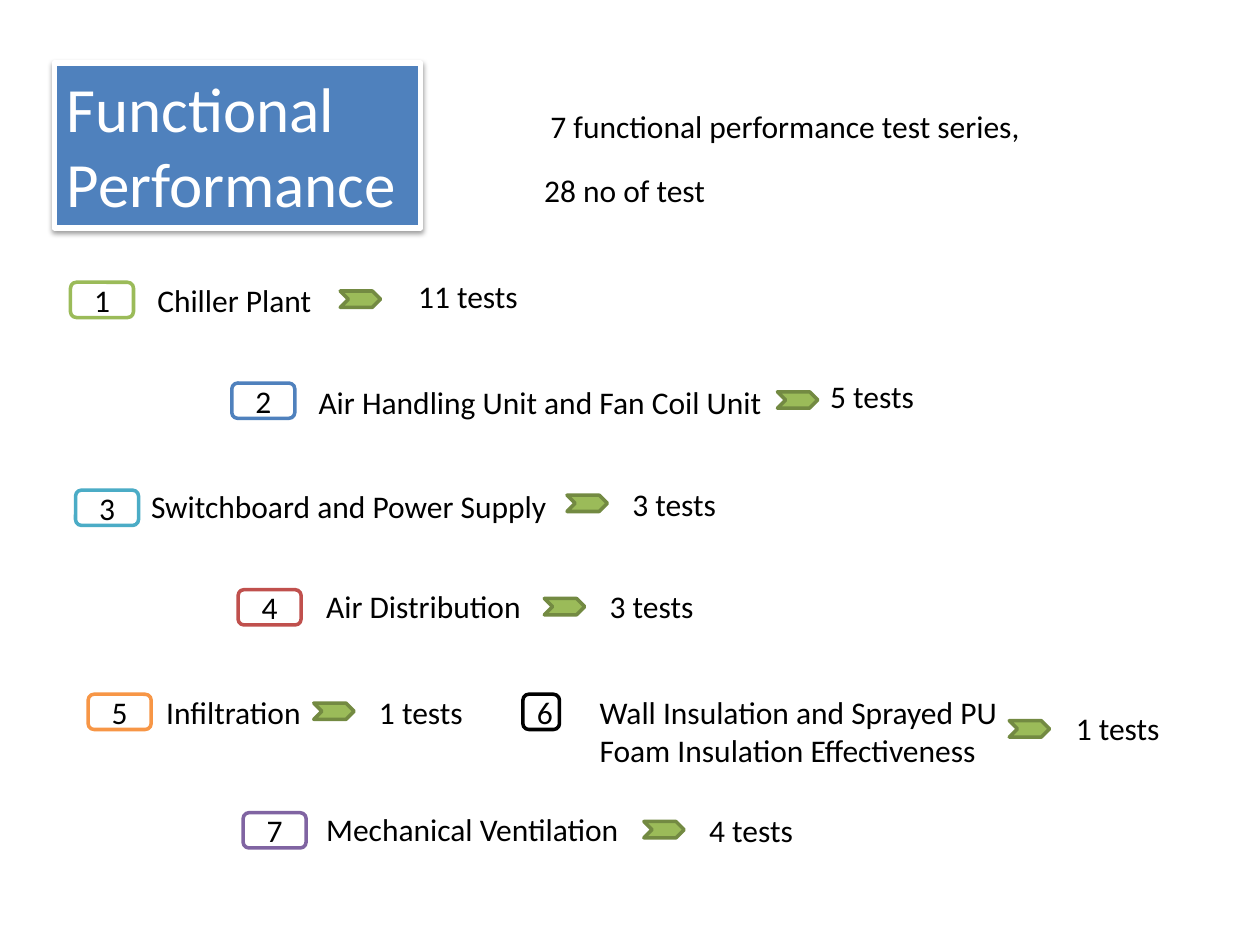
from lxml.etree import SubElement
from pptx import Presentation
from pptx.dml.color import RGBColor
from pptx.enum.shapes import MSO_SHAPE
from pptx.enum.text import MSO_ANCHOR, MSO_AUTO_SIZE, PP_ALIGN
from pptx.oxml.ns import qn
from pptx.util import Inches, Pt

BADGE_HEIGHT = 0.28
ARROW_SIZE = (0.32, 0.13)
LABEL_HEIGHT = 0.4
COUNT_WIDTH = 0.87

# number, badge (left, top, width, line colour), label (text, left, top, width),
# arrow (left, top), count (text, left, top)
TEST_SERIES = [
    ("1", (0.56, 2.24, 0.5, "9BBB59"), ("Chiller Plant", 1.15, 2.18, 2.07),
     (2.7, 2.31), ("11 tests", 3.22, 2.15)),
    ("2", (1.84, 3.04, 0.5, "4F81BD"), ("Air Handling Unit and Fan Coil Unit", 2.43, 2.99, 3.76),
     (6.17, 3.11), ("5 tests", 6.49, 2.94)),
    ("3", (0.6, 3.89, 0.5, "4BACC6"), ("Switchboard and Power Supply", 1.1, 3.82, 3.38),
     (4.5, 3.93), ("3 tests", 4.92, 3.8)),
    ("4", (1.89, 4.68, 0.5, "C0504D"), ("Air Distribution", 2.49, 4.61, 1.76),
     (4.32, 4.75), ("3 tests", 4.74, 4.61)),
    ("5", (0.7, 5.51, 0.5, "F79646"), ("Infiltration", 1.22, 5.45, 1.28),
     (2.49, 5.58), ("1 tests", 2.91, 5.45)),
    ("6", (4.15, 5.51, 0.29, "000000"),
     ("Wall Insulation and Sprayed PU Foam Insulation Effectiveness", 4.66, 5.45, 3.78),
     (8.01, 5.72), ("1 tests", 8.44, 5.58)),
    ("7", (1.93, 6.45, 0.5, "8064A2"), ("Mechanical Ventilation", 2.49, 6.38, 2.61),
     (5.11, 6.52), ("4 tests", 5.53, 6.39)),
]


def color(hex_string):
    return RGBColor.from_string(hex_string)


def write_text(shape, text, size=18, font="Calibri", font_color="000000",
               align=PP_ALIGN.LEFT, anchor=MSO_ANCHOR.TOP, wrap=True):
    frame = shape.text_frame
    frame.auto_size = MSO_AUTO_SIZE.NONE
    frame.word_wrap = wrap
    frame.vertical_anchor = anchor
    paragraph = frame.paragraphs[0]
    paragraph.alignment = align
    run = paragraph.add_run()
    run.text = text
    run.font.size = Pt(size)
    run.font.name = font
    run.font.color.rgb = color(font_color)


def add_drop_shadow(shape):
    effects = SubElement(shape._element.spPr, qn("a:effectLst"))
    shadow = SubElement(effects, qn("a:outerShdw"), blurRad=str(Pt(3.1)),
                        dist=str(Pt(1.6)), dir="5400000", rotWithShape="0")
    shadow_color = SubElement(shadow, qn("a:srgbClr"), val="000000")
    SubElement(shadow_color, qn("a:alpha"), val="38000")


class SlideBuilder:
    def __init__(self, slide):
        self.slide = slide

    def paint(self, shape, fill, line, line_width=2):
        shape.fill.solid()
        shape.fill.fore_color.rgb = color(fill)
        shape.line.color.rgb = color(line)
        shape.line.width = Pt(line_width)

    def title(self, text, left, top, width, height):
        title = self.slide.shapes.title
        title.left, title.top = Inches(left), Inches(top)
        title.width, title.height = Inches(width), Inches(height)
        self.paint(title, "4F81BD", "FFFFFF", line_width=3)
        add_drop_shadow(title)
        write_text(title, text, size=36, font_color="FFFFFF")

    def label(self, text, left, top, width, height=LABEL_HEIGHT, wrap=False):
        box = self.slide.shapes.add_textbox(
            Inches(left), Inches(top), Inches(width), Inches(height))
        write_text(box, text, wrap=wrap)

    def preset(self, kind, left, top, width, height, fill, line):
        shape = self.slide.shapes.add_shape(
            kind, Inches(left), Inches(top), Inches(width), Inches(height))
        shape.shadow.inherit = False
        self.paint(shape, fill, line)
        return shape

    def badge(self, number, left, top, width, line):
        shape = self.preset(MSO_SHAPE.ROUNDED_RECTANGLE, left, top, width,
                            BADGE_HEIGHT, "FFFFFF", line)
        write_text(shape, number, align=PP_ALIGN.CENTER, anchor=MSO_ANCHOR.MIDDLE)

    def arrow(self, left, top):
        self.preset(MSO_SHAPE.CHEVRON, left, top, *ARROW_SIZE, "9BBB59", "738A42")


def main():
    presentation = Presentation()
    presentation.slide_width = Inches(10)
    presentation.slide_height = Inches(7.5)
    title_only = presentation.slide_layouts[5]
    builder = SlideBuilder(presentation.slides.add_slide(title_only))

    builder.title("Functional Performance", 0.43, 0.5, 2.91, 1.31)
    builder.label("7 functional performance test series,", 4.27, 0.8, 4.57, 0.71, wrap=True)
    builder.label("28 no of test", 4.22, 1.31, 1.5)

    for number, badge, label, arrow, (count, count_left, count_top) in TEST_SERIES:
        two_lines = number == "6"
        builder.badge(number, *badge)
        builder.label(*label, height=0.71 if two_lines else LABEL_HEIGHT, wrap=two_lines)
        builder.arrow(*arrow)
        count_width = COUNT_WIDTH if len(count) == 7 else 1
        builder.label(count, count_left, count_top, count_width)

    presentation.save("out.pptx")


if __name__ == "__main__":
    main()
